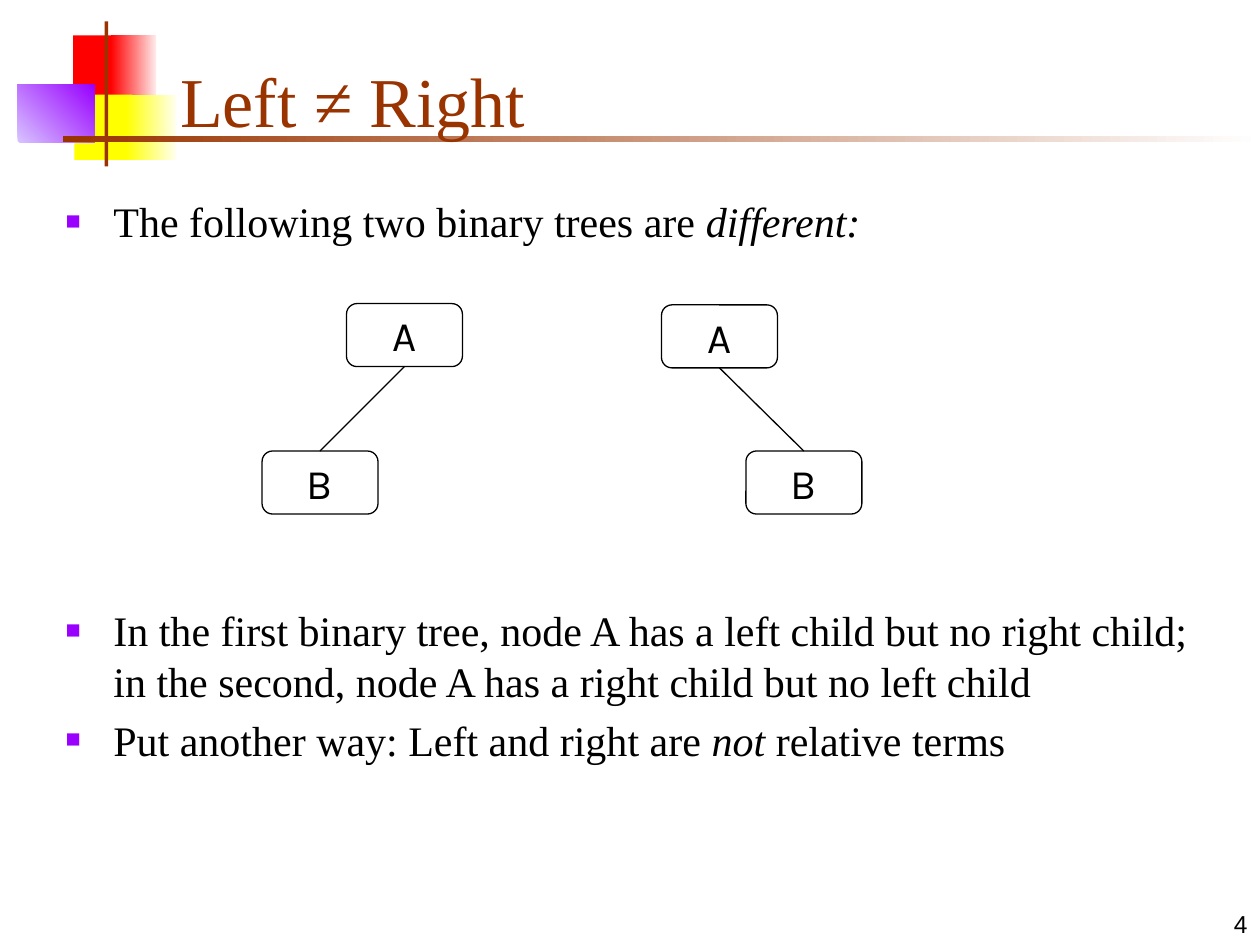
import pptx
import pptx.util
import pptx.dml.color
import pptx.enum.shapes
import pptx.enum.text
import pptx.oxml.ns
import lxml.etree

Inches = pptx.util.Inches
Pt = pptx.util.Pt
Kind = pptx.enum.shapes.MSO_SHAPE
Align = pptx.enum.text.PP_ALIGN
Anchor = pptx.enum.text.MSO_ANCHOR
qn = pptx.oxml.ns.qn

COLORS = {
    "red": "FF0000", "pink": "FFEAEA", "yellow": "FFFF00", "cream": "FFFFF0",
    "lilac": "D8C4FF", "purple": "9900FF", "brown": "993300",
    "white": "FFFFFF", "black": "000000",
}
FONTS = {
    "title": {"name": "Times New Roman", "size": Pt(40)},
    "body": {"name": "Times New Roman", "size": Pt(24)},
    "node": {"name": "Karla", "size": Pt(24)},
    "page": {"name": "Arial", "size": Pt(14)},
}
NODE_W, NODE_H = 0.92, 0.5


def shade(name):
    return pptx.dml.color.RGBColor.from_string(COLORS[name])


def apply(item, values):
    for key, value in values.items():
        setattr(item, key, value)


class Deck:
    def __init__(self):
        self.file = pptx.Presentation()
        apply(self.file, {"slide_width": Inches(10), "slide_height": Inches(7.5)})
        self.slide = self.file.slides.add_slide(self.file.slide_layouts[3])
        self.shapes = self.slide.shapes

    def words(self, para, text, style, color="black", **extra):
        run = para.add_run()
        run.text = text
        apply(run.font, {**FONTS[style], **extra})
        run.font.color.rgb = shade(color)

    def frame(self, shape, anchor, wrap=True):
        apply(shape.text_frame, {
            "word_wrap": wrap, "vertical_anchor": anchor,
            "auto_size": pptx.enum.text.MSO_AUTO_SIZE.NONE,
        })
        return shape.text_frame

    def place(self, index, box):
        holder = self.slide.placeholders[index]
        apply(holder, dict(zip(("left", "top", "width", "height"), map(Inches, box))))
        holder.element.getparent().append(holder.element)
        return holder

    def block(self, box, first, last=None, angle=0):
        shape = self.shapes.add_shape(Kind.RECTANGLE, *map(Inches, box))
        shape.shadow.inherit = False
        shape.line.fill.background()
        if last is None:
            shape.fill.solid()
            shape.fill.fore_color.rgb = shade(first)
            return
        shape.fill.gradient()
        shape.fill.gradient_angle = angle
        for stop, color in zip(shape.fill.gradient_stops, (first, last)):
            stop.color.rgb = shade(color)

    def title(self, box, text):
        para = self.frame(self.place(0, box), Anchor.BOTTOM).paragraphs[0]
        para.alignment = Align.LEFT
        self.words(para, text, "title", "brown")

    def bullet(self, para):
        props = para._p.get_or_add_pPr()
        indent = Inches(0.38)
        props.set("marL", str(indent))
        props.set("indent", str(-indent))
        color = lxml.etree.SubElement(props, qn("a:buClr"))
        lxml.etree.SubElement(color, qn("a:srgbClr"), val=COLORS["purple"])
        lxml.etree.SubElement(props, qn("a:buSzPct"), val="60000")
        lxml.etree.SubElement(props, qn("a:buFont"), typeface="Arial")
        lxml.etree.SubElement(props, qn("a:buChar"), char="■")

    def body(self, index, box, items):
        frame = self.frame(self.place(index, box), Anchor.TOP)
        for count, parts in enumerate(items):
            para = frame.add_paragraph() if count else frame.paragraphs[0]
            para.space_before = Pt(4.8)
            self.bullet(para)
            for text, slant in parts:
                self.words(para, text, "body", italic=slant)

    def page(self, box, text):
        shape = self.shapes.add_textbox(*map(Inches, box))
        para = self.frame(shape, Anchor.BOTTOM).paragraphs[0]
        para.alignment = Align.RIGHT
        self.words(para, text, "page")

    def stroke(self, line):
        line.color.rgb = shade("black")
        line.width = Pt(0.75)

    def node(self, left, top, text):
        box = map(Inches, (left, top, NODE_W, NODE_H))
        shape = self.shapes.add_shape(Kind.ROUNDED_RECTANGLE, *box)
        shape.shadow.inherit = False
        shape.fill.background()
        self.stroke(shape.line)
        para = self.frame(shape, Anchor.MIDDLE, False).paragraphs[0]
        para.alignment = Align.CENTER
        self.words(para, text, "node")
        return shape

    def edge(self, parent, child):
        line = self.shapes.add_connector(pptx.enum.shapes.MSO_CONNECTOR.STRAIGHT, 0, 0, 0, 0)
        line.begin_connect(parent, 2)
        line.end_connect(child, 0)
        self.stroke(line.line)
        lxml.etree.SubElement(line.element.spPr, qn("a:effectLst"))

    def tree(self, left, top, shift):
        parent = self.node(left, top, "A")
        child = self.node(left + shift, 3.58, "B")
        self.edge(parent, child)


def main():
    deck = Deck()
    deck.block((0.58, 0.28, 0.35, 0.52), "red")
    deck.block((0.88, 0.28, 0.36, 0.52), "red", "pink")
    deck.block((0.59, 0.75, 0.46, 0.52), "yellow")
    deck.block((1, 0.75, 0.4, 0.52), "yellow", "cream")
    deck.block((0.14, 0.67, 0.61, 0.46), "lilac", "purple", 45)
    deck.block((0.83, 0.17, 0.03, 1.15), "brown")
    deck.block((0.5, 1.08, 9.5, 0.05), "brown", "white")
    deck.page((7.92, 7, 2.08, 0.5), "4")
    deck.title((1.33, 0.25, 8.52, 0.92), "Left ≠ Right")
    deck.body(1, (0.42, 1.5, 9.33, 2.08), [
        [("The following two binary trees are ", False), ("different:", True)],
    ])
    deck.body(2, (0.42, 4.75, 9.13, 1.96), [
        [("In the first binary tree, node A has a left child but no right child; "
          "in the second, node A has a right child but no left child", False)],
        [("Put another way: Left and right are ", False), ("not", True),
         (" relative terms", False)],
    ])
    deck.tree(2.75, 2.41, -0.67)
    deck.tree(5.25, 2.42, 0.67)
    deck.file.save("out.pptx")


if __name__ == "__main__":
    main()
